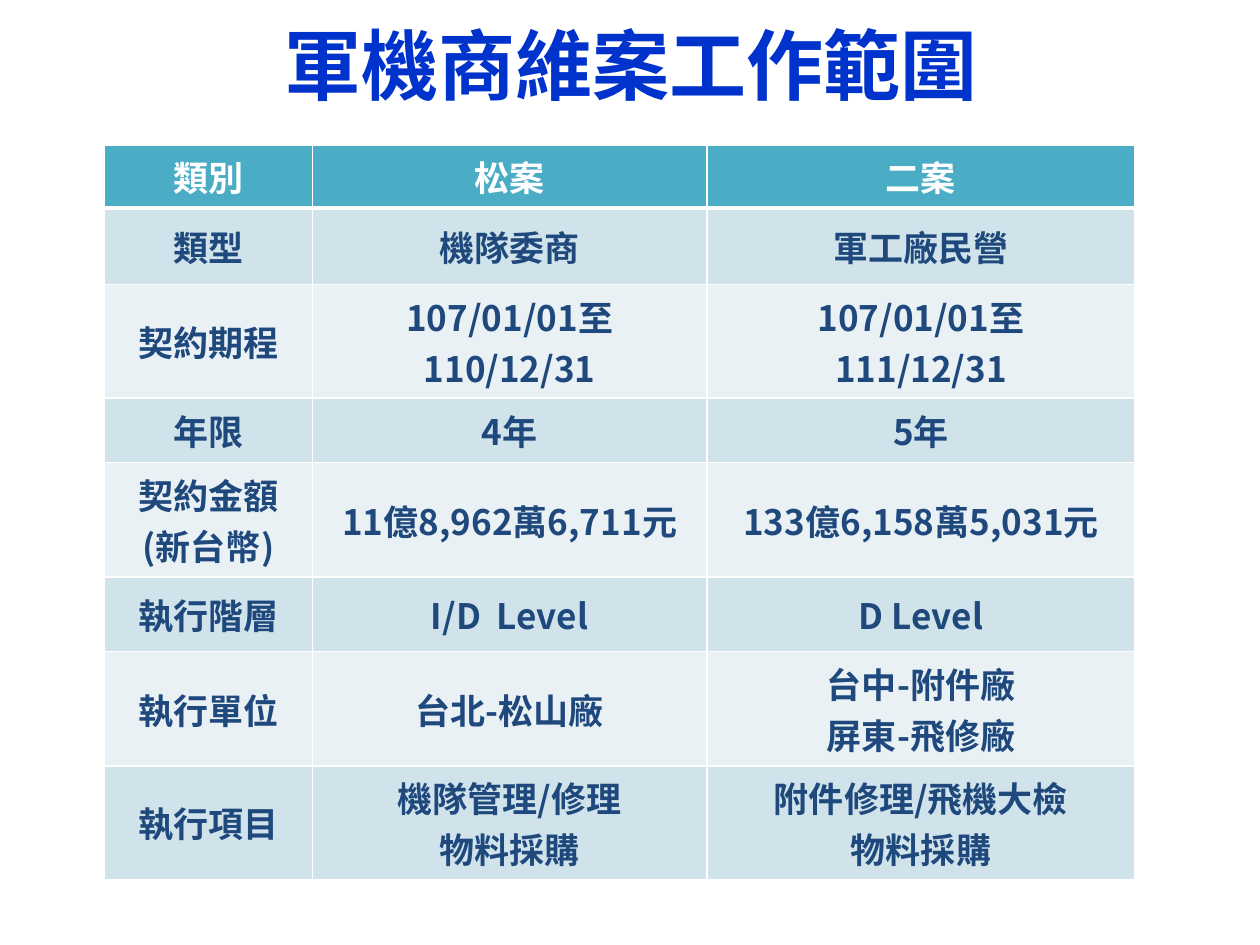
from pptx import Presentation, util as u
from pptx.dml.color import RGBColor
from pptx.enum import text
from pptx.oxml import ns
from lxml import etree

COLORS = {"title": "0033CC", "header": "4BACC6", "band": "D0E3EA",
          "light": "E9F1F5", "body": "1F497D", "white": "FFFFFF"}
FONT = "Noto Sans CJK SC"


def style_text(frame, size, color):
    for paragraph in frame.paragraphs:
        paragraph.alignment = text.PP_ALIGN.CENTER
        for run in paragraph.runs:
            font_format = {"name": FONT, "size": u.Pt(size), "bold": True}
            for key, value in font_format.items():
                setattr(run.font, key, value)
            run.font.color.rgb = RGBColor.from_string(COLORS[color])
            etree.SubElement(run.font._element, ns.qn("a:ea"), typeface=FONT)


def add_border(cell, side, points):
    line = etree.Element(ns.qn(f"a:ln{side}"), w=str(u.Pt(points)))
    fill = etree.SubElement(line, ns.qn("a:solidFill"))
    etree.SubElement(fill, ns.qn("a:srgbClr"), val=COLORS["white"])
    cell._tc.get_or_add_tcPr().append(line)


prs = Presentation()
prs.slide_width, prs.slide_height = u.Inches(10), u.Inches(7.5)
slide = prs.slides.add_slide(prs.slide_layouts[6])

title = slide.shapes.add_textbox(u.Inches(0.51), u.Inches(0), u.Inches(9), u.Inches(0.87)).text_frame
title_format = {"word_wrap": True, "margin_top": u.Inches(0.04), "text": "軍機商維案工作範圍"}
for key, value in title_format.items():
    setattr(title, key, value)
title.paragraphs[0].line_spacing = u.Pt(60)
style_text(title, 44, "title")

scope_rows = [
    (0.5, "類別", "松案", "二案"),
    (0.61, "類型", "機隊委商", "軍工廠民營"),
    (0.9, "契約期程", "107/01/01至\n110/12/31", "107/01/01至\n111/12/31"),
    (0.51, "年限", "4年", "5年"),
    (0.91, "契約金額\n(新台幣)", "11億8,962萬6,711元", "133億6,158萬5,031元"),
    (0.59, "執行階層", "I/D  Level", "D Level"),
    (0.91, "執行單位", "台北-松山廠", "台中-附件廠\n屏東-飛修廠"),
    (0.9, "執行項目", "機隊管理/修理\n物料採購", "附件修理/飛機大檢\n物料採購"),
]
column_widths = [1.65, 3.13, 3.4]

scope = slide.shapes.add_table(len(scope_rows), len(column_widths), u.Inches(0.83), u.Inches(1.15),
                               u.Inches(8.18), u.Inches(5.83)).table
for column, width in zip(scope.columns, column_widths):
    column.width = u.Inches(width)

for r, (height, *entries) in enumerate(scope_rows):
    scope.rows[r].height = u.Inches(height)
    fill_color = "header" if r == 0 else "band" if r % 2 else "light"
    for c, entry in enumerate(entries):
        cell = scope.cell(r, c)
        cell.text = entry
        cell.vertical_anchor = text.MSO_ANCHOR.MIDDLE
        style_text(cell.text_frame, 20, "body" if r else "white")
        borders = {"L": 1, "R": 1, "T": 3 if r == 1 else 1, "B": 1 if r else 3}
        for side, points in borders.items():
            add_border(cell, side, points)
        cell.fill.solid()
        cell.fill.fore_color.rgb = RGBColor.from_string(COLORS[fill_color])

prs.save("out.pptx")
